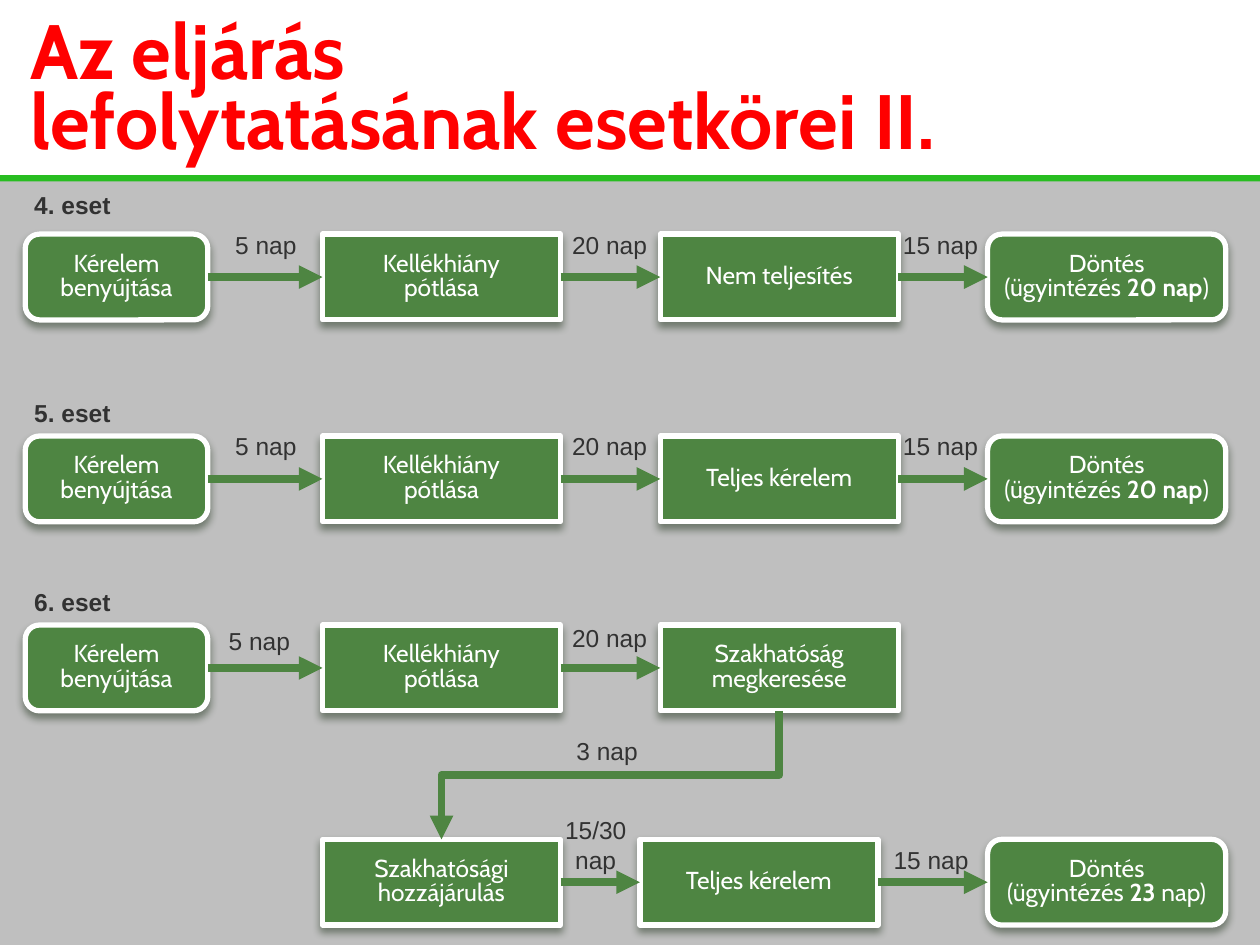
from typing import NamedTuple

from lxml import etree
from pptx import Presentation
from pptx.dml.color import RGBColor
from pptx.enum.shapes import MSO_CONNECTOR, MSO_SHAPE
from pptx.enum.text import MSO_ANCHOR, PP_ALIGN
from pptx.oxml.ns import qn
from pptx.util import Cm, Pt

RECT = MSO_SHAPE.RECTANGLE
ROUNDED = MSO_SHAPE.FLOWCHART_ALTERNATE_PROCESS
STRAIGHT, ELBOW = MSO_CONNECTOR.STRAIGHT, MSO_CONNECTOR.ELBOW
MIDDLE = MSO_ANCHOR.MIDDLE
LEFT, CENTER = PP_ALIGN.LEFT, PP_ALIGN.CENTER
LEFT_SITE, RIGHT_SITE = 1, 3

GREEN, WHITE, DARK = "4E8542", "FFFFFF", "323232"
GRAY, BRIGHT_GREEN, RED = "BFBFBF", "28BD21", "FF0000"
SLIDE_WIDTH, SLIDE_HEIGHT, HEADER_HEIGHT = 25.4, 19.05, 3.53
BOX_HEIGHT = 1.73
LABEL_WIDTH, LABEL_HEIGHT = 1.73, 0.81


class Step(NamedTuple):
    left: float
    width: float
    kind: int
    wording: tuple[str, ...]  # either plain, or plain, bold, plain


class Label(NamedTuple):
    center: float
    top: float
    lines: tuple[str, ...]


class Flow(NamedTuple):
    top: float
    steps: tuple[Step, ...]


def color(value: str) -> RGBColor:
    return RGBColor.from_string(value)


def style_runs(paragraph, font: str, size: float, ink: str, bold: bool = False) -> None:
    for run in paragraph.runs:
        run.font.name = font
        run.font.size = Pt(size)
        run.font.bold = bold
        run.font.color.rgb = color(ink)


def add_shadow(properties, ink: str, alpha: int, blur: float, distance: float, angle: int) -> None:
    """Give a shape or a run an outer shadow; blur and distance are in points."""
    effects = properties.find(qn("a:effectLst"))
    if effects is None:
        effects = etree.Element(qn("a:effectLst"))
        properties.find(qn("a:solidFill")).addnext(effects)
    shadow = etree.SubElement(effects, qn("a:outerShdw"), blurRad=str(Pt(blur)),
                              dist=str(Pt(distance)), dir=str(angle * 60000),
                              algn="ctr", rotWithShape="0")
    tone = etree.SubElement(shadow, qn("a:srgbClr"), val=ink)
    etree.SubElement(tone, qn("a:alpha"), val=str(alpha * 1000))


def add_band(slide, top: float, height: float, fill: str) -> None:
    band = slide.shapes.add_shape(RECT, 0, Cm(top), Cm(SLIDE_WIDTH), Cm(height))
    band.shadow.inherit = False
    band.fill.solid()
    band.fill.fore_color.rgb = color(fill)
    band.line.fill.background()


def add_step(slide, step: Step, top: float):
    box = slide.shapes.add_shape(step.kind, Cm(step.left), Cm(top), Cm(step.width), Cm(BOX_HEIGHT))
    box.fill.solid()
    box.fill.fore_color.rgb = color(GREEN)
    box.line.color.rgb = color(WHITE)
    box.line.width = Pt(3)
    box.shadow.inherit = False
    add_shadow(box.element.spPr, "1B2F17", 48, 4.5, 3, 90)

    frame = box.text_frame
    frame.word_wrap = True
    frame.vertical_anchor = MIDDLE
    frame.margin_left = frame.margin_right = 0
    paragraph = frame.paragraphs[0]
    paragraph.alignment = CENTER
    paragraph.line_spacing = Pt(14)
    paragraph.text = step.wording[0]
    for words in step.wording[1:]:
        paragraph.add_run().text = words
    style_runs(paragraph, "Cabin", 14, WHITE)
    if len(step.wording) > 1:
        paragraph.runs[-2].font.bold = True
    return box


def add_text(slide, left: float, top: float, width: float, height: float,
             lines: tuple[str, ...], align=LEFT, margins=(0, 0.1, 0, 0.1), wrap: bool = True):
    """Add a text box with margins in the order left, top, right, bottom."""
    box = slide.shapes.add_textbox(Cm(left), Cm(top), Cm(width), Cm(height))
    frame = box.text_frame
    frame.word_wrap = wrap
    frame.vertical_anchor = MIDDLE
    (frame.margin_left, frame.margin_top,
     frame.margin_right, frame.margin_bottom) = map(Cm, margins)
    frame.text = "\n".join(lines)
    for paragraph in frame.paragraphs:
        paragraph.alignment = align
    return box


def add_title(slide, lines: tuple[str, ...]) -> None:
    title = add_text(slide, 0, 0, SLIDE_WIDTH, HEADER_HEIGHT, lines, margins=(0.61, 0.3, 0, 0))
    for paragraph in title.text_frame.paragraphs:
        paragraph.line_spacing = Pt(40)
        style_runs(paragraph, "Cabin", 44, RED, bold=True)
    for properties in list(title.element.iter(qn("a:rPr"))):
        add_shadow(properties, "000000", 43, 3, 3, 45)


def add_heading(slide, text: str, top: float) -> None:
    heading = add_text(slide, 0.69, top, 3.81, 0.8, (text,))
    style_runs(heading.text_frame.paragraphs[0], "Arial", 14, DARK, bold=True)


def add_label(slide, label: Label) -> None:
    height = LABEL_HEIGHT + 0.59 * (len(label.lines) - 1)
    duration = add_text(slide, label.center - LABEL_WIDTH / 2, label.top, LABEL_WIDTH, height,
                        label.lines, CENTER, (0.1, 0.1, 0.1, 0.1), wrap=False)
    for paragraph in duration.text_frame.paragraphs:
        style_runs(paragraph, "Arial", 14, DARK)


def add_arrow(slide, kind, x1: int, y1: int, x2: int, y2: int):
    arrow = slide.shapes.add_connector(kind, x1, y1, x2, y2)
    arrow.line.color.rgb = color(GREEN)
    arrow.line.width = Pt(4.5)
    properties = arrow.element.spPr
    etree.SubElement(properties.find(qn("a:ln")), qn("a:tailEnd"), type="triangle")
    etree.SubElement(properties, qn("a:effectLst"))
    return arrow


def join_steps(slide, source, target) -> None:
    middle = source.top + source.height // 2
    arrow = add_arrow(slide, STRAIGHT, source.left + source.width, middle, target.left, middle)
    arrow.begin_connect(source, RIGHT_SITE)
    arrow.end_connect(target, LEFT_SITE)


def join_flows(slide, source, target) -> None:
    """Lead from the bottom of source down and left to the top of target."""
    x1, y1 = source.left + source.width // 2, source.top + source.height
    x2, y2 = target.left + target.width // 2, target.top
    center_x, center_y = (x1 + x2) // 2, (y1 + y2) // 2
    half_drop, half_span = (y2 - y1) // 2, (x1 - x2) // 2
    arrow = add_arrow(slide, ELBOW, center_x - half_drop, center_y - half_span,
                      center_x + half_drop, center_y + half_span)
    arrow.element.spPr.find(qn("a:xfrm")).set("rot", str(90 * 60000))


def decision(days: str, closing: str) -> Step:
    return Step(19.91, 4.8, ROUNDED, ("Döntés\v(ügyintézés ", days, closing))


def third_step(text: str, left: float = 13.31) -> Step:
    return Step(left, 4.8, RECT, (text,))


REQUEST = Step(0.51, 3.68, ROUNDED, ("Kérelem benyújtása",))
SUPPLEMENT = Step(6.5, 4.8, RECT, ("Kellékhiány\vpótlása",))
FLOWS = (
    Flow(4.72, (REQUEST, SUPPLEMENT, third_step("Nem teljesítés"), decision("20 nap", ")"))),
    Flow(8.79, (REQUEST, SUPPLEMENT, third_step("Teljes kérelem"), decision("20 nap", ")"))),
    Flow(12.6, (REQUEST, SUPPLEMENT, third_step("Szakhatóság megkeresése"))),
    Flow(16.92, (Step(6.5, 4.8, RECT, ("Szakhatósági hozzájárulás",)),
                 third_step("Teljes kérelem", 12.9), decision("23", " nap)"))),
)
HEADINGS = (("4. eset", 3.73), ("5. eset", 7.92), ("6. eset", 11.73))
FULL_FLOW_LABELS = ((5.36, "5 nap"), (12.29, "20 nap"), (18.96, "15 nap"))
LABELS = tuple(Label(center, flow.top - 0.2, (text,))
               for flow in FLOWS[:2] for center, text in FULL_FLOW_LABELS) + (
    Label(5.23, 12.52, ("5 nap",)),
    Label(12.29, 12.45, ("20 nap",)),
    Label(12.24, 14.73, ("3 nap",)),
    Label(12.01, 16.33, ("15/30", "nap")),
    Label(18.77, 16.92, ("15 nap",)),
)


def main() -> None:
    deck = Presentation()
    deck.slide_width, deck.slide_height = Cm(SLIDE_WIDTH), Cm(SLIDE_HEIGHT)
    slide = deck.slides.add_slide(deck.slide_layouts[6])
    add_band(slide, HEADER_HEIGHT, SLIDE_HEIGHT - HEADER_HEIGHT, GRAY)
    add_band(slide, HEADER_HEIGHT, 0.13, BRIGHT_GREEN)
    add_title(slide, ("Az eljárás", "lefolytatásának esetkörei II."))
    for text, top in HEADINGS:
        add_heading(slide, text, top)
    rows = [[add_step(slide, step, flow.top) for step in flow.steps] for flow in FLOWS]
    for label in LABELS:
        add_label(slide, label)
    for row in rows:
        for source, target in zip(row, row[1:]):
            join_steps(slide, source, target)
    join_flows(slide, rows[2][-1], rows[3][0])
    deck.save("out.pptx")


if __name__ == "__main__":
    main()
